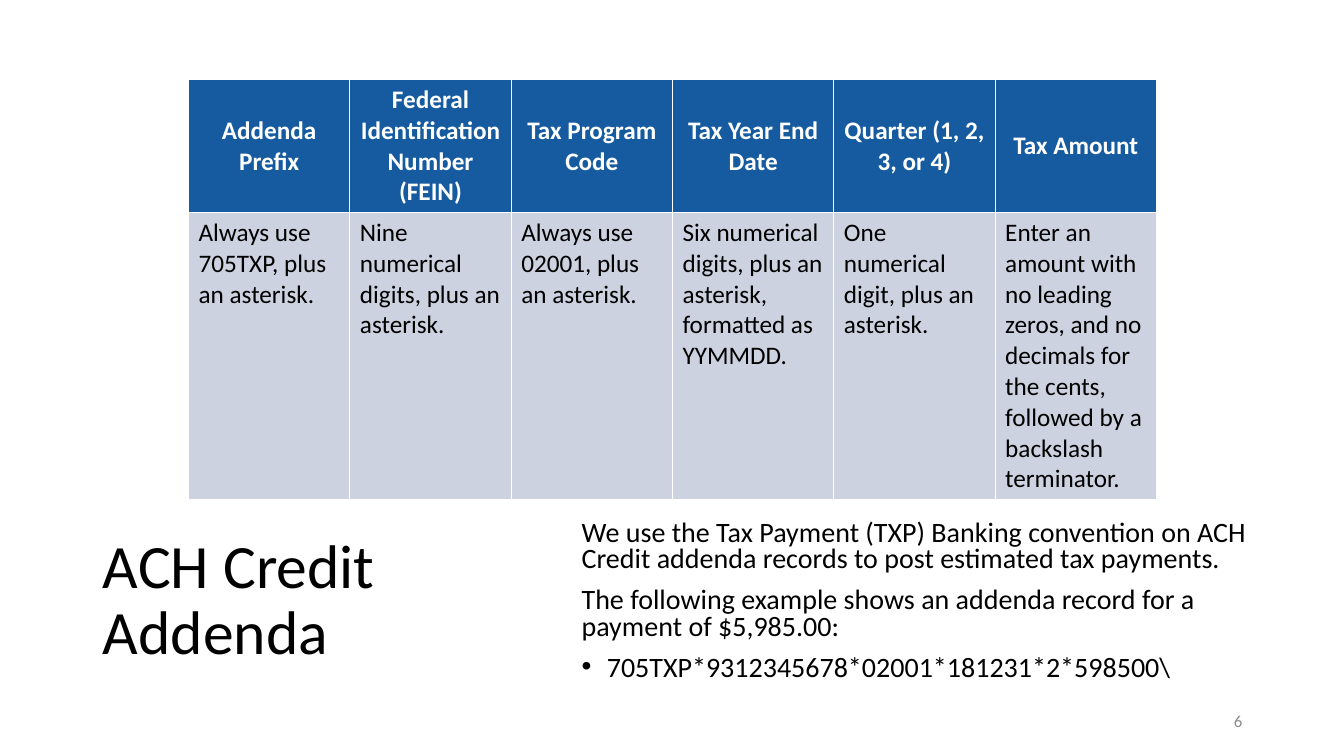
from dataclasses import dataclass

from pptx import Presentation
from pptx.dml.color import RGBColor
from pptx.enum import text
from pptx.oxml import parse_xml
from pptx.oxml.ns import nsdecls
from pptx.util import Inches, Pt

FONT = "Calibri"
BLACK, WHITE, GRAY = "000000", "FFFFFF", "8C8C8C"
HEADER_BLUE, BODY_BLUE = "165B9F", "CCD2DF"
LEFT, CENTER, RIGHT = text.PP_ALIGN.LEFT, text.PP_ALIGN.CENTER, text.PP_ALIGN.RIGHT
MIDDLE, TOP = text.MSO_ANCHOR.MIDDLE, text.MSO_ANCHOR.TOP
COLUMN_WIDTH = 1.6
ROW_HEIGHTS = (1.32, 2.85)


@dataclass
class Field:
    heading: str
    rule: str


@dataclass
class Line:
    content: str
    bullet: bool = False


FIELDS = [
    Field("Addenda Prefix", "Always use 705TXP, plus an asterisk."),
    Field("Federal Identification Number (FEIN)", "Nine numerical digits, plus an asterisk."),
    Field("Tax Program Code", "Always use 02001, plus an asterisk."),
    Field("Tax Year End Date", "Six numerical digits, plus an asterisk, formatted as YYMMDD."),
    Field("Quarter (1, 2, 3, or 4)", "One numerical digit, plus an asterisk."),
    Field("Tax Amount", "Enter an amount with no leading zeros, and no decimals for the cents, "
                        "followed by a backslash terminator."),
]
EXPLANATION = [
    Line("We use the Tax Payment (TXP) Banking convention on ACH Credit addenda records "
         "to post estimated tax payments."),
    Line("The following example shows an addenda record for a payment of $5,985.00:"),
    Line("705TXP*9312345678*02001*181231*2*598500\\", bullet=True),
]


def color(value: str) -> RGBColor:
    return RGBColor.from_string(value)


def write(para, content: str, *, size: float, ink: str = BLACK, bold: bool = False,
          align=LEFT, spacing: float = 1.0, before: float = 0) -> None:
    para.alignment = align
    para.line_spacing = spacing
    para.space_before = Pt(before)
    span = para.add_run()
    span.text = content
    span.font.name = FONT
    span.font.size = Pt(size)
    span.font.bold = bold
    span.font.color.rgb = color(ink)


def add_bullet(para) -> None:
    properties = para._p.get_or_add_pPr()
    properties.set("marL", str(Inches(0.25)))
    properties.set("indent", str(Inches(-0.25)))
    properties.append(parse_xml(f'<a:buFont {nsdecls("a")} typeface="Arial"/>'))
    properties.append(parse_xml(f'<a:buChar {nsdecls("a")} char="•"/>'))


def add_frame(page, left: float, top: float, width: float, height: float):
    box = page.shapes.add_textbox(Inches(left), Inches(top), Inches(width), Inches(height))
    box.text_frame.word_wrap = True
    box.text_frame.vertical_anchor = MIDDLE
    return box.text_frame


def add_title(page) -> None:
    title = page.shapes.title
    title.left, title.top = Inches(0.92), Inches(5.06)
    title.width, title.height = Inches(4.54), Inches(1.82)
    title.text_frame.word_wrap = True
    title.text_frame.vertical_anchor = MIDDLE
    write(title.text_frame.paragraphs[0], "ACH Credit Addenda", size=44, spacing=0.9)


def add_explanation(page) -> None:
    frame = add_frame(page, 5.67, 5.06, 6.89, 1.82)
    for index, line in enumerate(EXPLANATION):
        para = frame.add_paragraph() if index else frame.paragraphs[0]
        if line.bullet:
            add_bullet(para)
        write(para, line.content, size=20, spacing=0.8, before=10 if index else 0)


def add_field_table(page) -> None:
    table = page.shapes.add_table(
        len(ROW_HEIGHTS), len(FIELDS), Inches(1.87), Inches(0.79),
        Inches(COLUMN_WIDTH * len(FIELDS)), Inches(sum(ROW_HEIGHTS))).table
    for row, height in zip(table.rows, ROW_HEIGHTS):
        row.height = Inches(height)
    for index, field in enumerate(FIELDS):
        table.columns[index].width = Inches(COLUMN_WIDTH)
        heading, rule = table.cell(0, index), table.cell(1, index)
        for cell, fill, anchor in ((heading, HEADER_BLUE, MIDDLE), (rule, BODY_BLUE, TOP)):
            cell.fill.solid()
            cell.fill.fore_color.rgb = color(fill)
            cell.vertical_anchor = anchor
        write(heading.text_frame.paragraphs[0], field.heading,
              size=18, ink=WHITE, bold=True, align=CENTER)
        write(rule.text_frame.paragraphs[0], field.rule, size=18)


def main() -> None:
    deck = Presentation()
    deck.slide_width, deck.slide_height = Inches(13.33), Inches(7.5)
    page = deck.slides.add_slide(deck.slide_layouts[5])
    add_title(page)
    add_explanation(page)
    number = add_frame(page, 9.42, 6.95, 3, 0.4)
    write(number.paragraphs[0], "6", size=12, ink=GRAY, align=RIGHT)
    add_field_table(page)
    deck.save("out.pptx")


if __name__ == "__main__":
    main()
